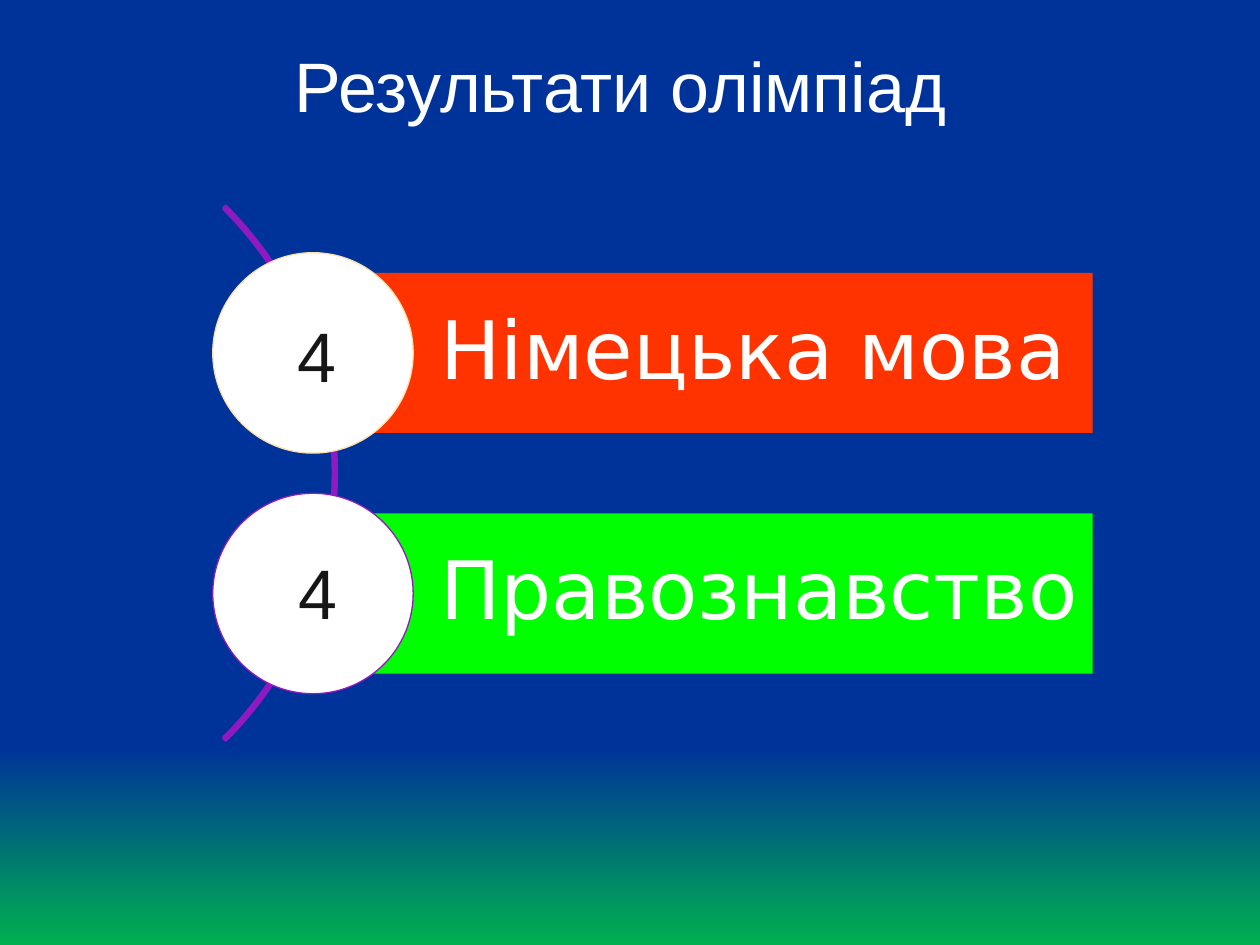
from dataclasses import dataclass

from pptx import Presentation
from pptx.dml.color import RGBColor
from pptx.enum.shapes import MSO_SHAPE
from pptx.enum.text import MSO_ANCHOR, PP_ALIGN
from pptx.util import Cm, Pt

WHITE = "FFFFFF"
PURPLE = "9119C1"
CENTRE_Y = 9.54
ARC_DIAMETER = 15.21
ARC_LEFT = -8.43
ROW_PITCH = 4.85
CIRCLE_LEFT = 4.29
CIRCLE_DIAMETER = 4.04
BAR_WIDTH = 15.72
BAR_HEIGHT = 3.23


@dataclass
class Result:
    subject: str
    count: str
    bar_color: str
    ring_color: str
    count_top: float
    count_width: float


RESULTS = [
    Result("Німецька мова", "4", "FF3300", "FDE0AA", 6.17, 1.17),
    Result("Правознавство", "4", "00FF00", PURPLE, 10.95, 1.35),
]


def rgb(color: str) -> RGBColor:
    return RGBColor.from_string(color)


def add_run(paragraph, text: str, size: float, font: str, color: str) -> None:
    run = paragraph.add_run()
    run.text = text
    run.font.size = Pt(size)
    run.font.name = font
    run.font.color.rgb = rgb(color)


def add_shape(slide, kind, left: float, top: float, width: float, height: float,
              fill: str = "", line: str = "", line_width: float = 0.75):
    """Add a shadowless shape; an empty colour means no fill or no line."""
    shape = slide.shapes.add_shape(kind, Cm(left), Cm(top), Cm(width), Cm(height))
    shape.shadow.inherit = False
    if fill:
        shape.fill.solid()
        shape.fill.fore_color.rgb = rgb(fill)
    else:
        shape.fill.background()
    if line:
        shape.line.color.rgb = rgb(line)
        shape.line.width = Pt(line_width)
    else:
        shape.line.fill.background()
    return shape


def paint_background(slide) -> None:
    fill = slide.background.fill
    fill.gradient()
    fill.gradient_angle = 270
    for stop, (position, color) in zip(fill.gradient_stops, [(0.79, "003399"), (1, "00B050")]):
        stop.position = position
        stop.color.rgb = rgb(color)


def add_title(slide, text: str) -> None:
    title = slide.shapes.title
    title.left, title.top, title.width, title.height = Cm(0), Cm(0.64), Cm(25.4), Cm(2.11)
    title.text_frame.vertical_anchor = MSO_ANCHOR.MIDDLE
    paragraph = title.text_frame.paragraphs[0]
    paragraph.alignment = PP_ALIGN.CENTER
    add_run(paragraph, text, 40, "Arial", WHITE)


def add_arc(slide) -> None:
    arc = add_shape(slide, MSO_SHAPE.BLOCK_ARC, ARC_LEFT, CENTRE_Y - ARC_DIAMETER / 2,
                    ARC_DIAMETER, ARC_DIAMETER, line=PURPLE, line_width=2)
    for index, value in enumerate([189, 27, 0.004]):
        arc.adjustments[index] = value


def add_result(slide, result: Result, centre_y: float) -> None:
    bar = add_shape(slide, MSO_SHAPE.RECTANGLE, CIRCLE_LEFT + CIRCLE_DIAMETER / 2,
                    centre_y - BAR_HEIGHT / 2, BAR_WIDTH, BAR_HEIGHT, result.bar_color)
    frame = bar.text_frame
    frame.word_wrap = True
    frame.vertical_anchor = MSO_ANCHOR.MIDDLE
    frame.margin_left, frame.margin_right = Cm(2.57), Cm(0)
    frame.margin_top = frame.margin_bottom = Cm(0.33)
    paragraph = frame.paragraphs[0]
    paragraph.alignment = PP_ALIGN.LEFT
    paragraph.line_spacing = 0.9
    add_run(paragraph, result.subject, 46, "DejaVu Sans", WHITE)

    add_shape(slide, MSO_SHAPE.OVAL, CIRCLE_LEFT, centre_y - CIRCLE_DIAMETER / 2,
              CIRCLE_DIAMETER, CIRCLE_DIAMETER, WHITE, result.ring_color)


def add_count(slide, result: Result) -> None:
    box = slide.shapes.add_textbox(Cm(5.74), Cm(result.count_top),
                                   Cm(result.count_width), Cm(1.96))
    box.text_frame.word_wrap = True
    paragraph = box.text_frame.paragraphs[0]
    paragraph.alignment = PP_ALIGN.CENTER
    add_run(paragraph, result.count, 40, "Arial", "161616")


def main() -> None:
    presentation = Presentation()
    presentation.slide_width, presentation.slide_height = Cm(25.4), Cm(19.05)
    slide = presentation.slides.add_slide(presentation.slide_layouts[5])
    paint_background(slide)
    add_title(slide, "Результати олімпіад ")
    add_arc(slide)
    first_centre = CENTRE_Y - ROW_PITCH * (len(RESULTS) - 1) / 2
    for index, result in enumerate(RESULTS):
        add_result(slide, result, first_centre + index * ROW_PITCH)
    for result in RESULTS:
        add_count(slide, result)
    presentation.save("out.pptx")


if __name__ == "__main__":
    main()
